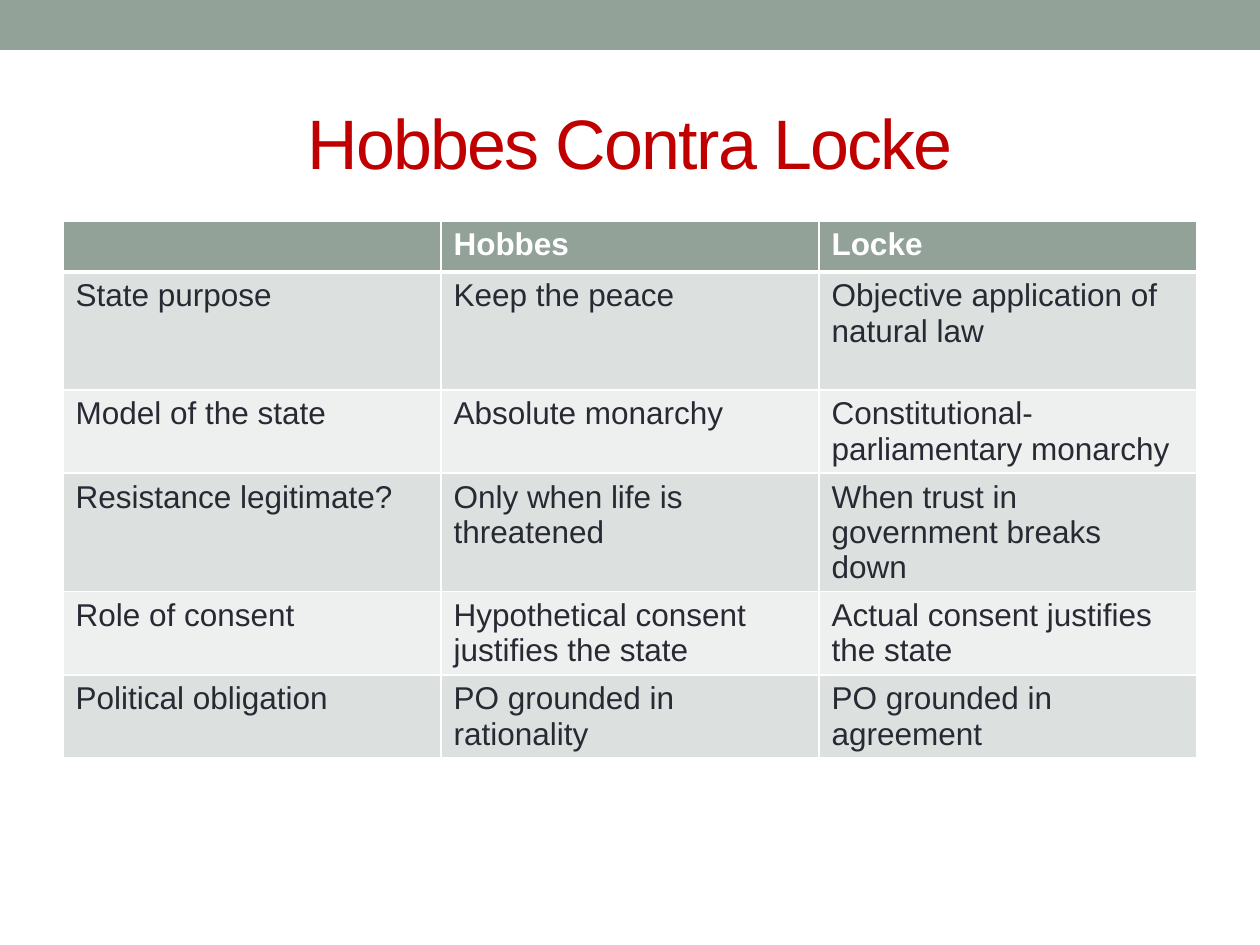
from lxml.etree import SubElement
from pptx import Presentation
from pptx.dml.color import RGBColor
from pptx.enum.shapes import MSO_SHAPE
from pptx.enum.text import MSO_ANCHOR, PP_ALIGN
from pptx.oxml.ns import qn
from pptx.util import Emu, Pt

TITLE = "Hobbes Contra Locke"
ROWS = [
    ("", "Hobbes", "Locke"),
    ("State purpose", "Keep the peace", "Objective application of natural law"),
    ("Model of the state", "Absolute monarchy", "Constitutional-parliamentary monarchy"),
    ("Resistance legitimate?", "Only when life is threatened",
     "When trust in government breaks down"),
    ("Role of consent", "Hypothetical consent justifies the state",
     "Actual consent justifies the state"),
    ("Political obligation", "PO grounded in rationality", "PO grounded in agreement"),
]
ROW_HEIGHTS = [51, 118, 83, 118, 83, 83]
COL_WIDTH = 378

FONT = "Arial"
SAGE = RGBColor(0x93, 0xA2, 0x99)
BANDS = [RGBColor(0xEE, 0xF0, 0xEF), RGBColor(0xDC, 0xE0, 0xDE)]
RED = RGBColor(0xC0, 0x00, 0x00)
INK = RGBColor(0x29, 0x29, 0x34)
WHITE = RGBColor(0xFF, 0xFF, 0xFF)


def px(n):
    return Emu(round(n * 914400 / 126))


def style(r, size, color, bold=False):
    r.font.name = FONT
    r.font.size = Pt(size)
    r.font.bold = bold
    r.font.color.rgb = color


def add_borders(cell, widths):
    tcPr = cell._tc.get_or_add_tcPr()
    for side, width in widths.items():
        ln = SubElement(tcPr, qn(f"a:ln{side}"), w=str(Pt(width)))
        fill = SubElement(ln, qn("a:solidFill"))
        SubElement(fill, qn("a:srgbClr"), val=str(WHITE))


prs = Presentation()
prs.slide_width, prs.slide_height = px(1260), px(945)
s = prs.slides.add_slide(prs.slide_layouts[5])

# Top band
band = s.shapes.add_shape(MSO_SHAPE.RECTANGLE, 0, 0, prs.slide_width, px(50))
band.shadow.inherit = False
band.fill.solid()
band.fill.fore_color.rgb = SAGE
band.line.fill.background()

# Title
title = s.shapes.title
title.left, title.top, title.width, title.height = px(63), px(73), px(1134), px(136)
tf = title.text_frame
tf.text = TITLE
tf.vertical_anchor = MSO_ANCHOR.MIDDLE
p = tf.paragraphs[0]
p.alignment = PP_ALIGN.CENTER
r = p.runs[0]
style(r, 40, RED)
r.font._element.set("spc", "-100")

# Comparison table
table = s.shapes.add_table(len(ROWS), len(ROWS[0]), px(63), px(221),
                           px(COL_WIDTH * len(ROWS[0])), px(sum(ROW_HEIGHTS))).table
for col in table.columns:
    col.width = px(COL_WIDTH)
for i, (texts, height) in enumerate(zip(ROWS, ROW_HEIGHTS)):
    header = i == 0
    table.rows[i].height = px(height)
    for j, text in enumerate(texts):
        cell = table.cell(i, j)
        add_borders(cell, {"L": 1, "R": 1, "T": 3 if i == 1 else 1, "B": 3 if header else 1})
        cell.fill.solid()
        cell.fill.fore_color.rgb = SAGE if header else BANDS[i % 2]
        if text:
            cell.text = text
            style(cell.text_frame.paragraphs[0].runs[0], 18, WHITE if header else INK, header)

prs.save("out.pptx")
